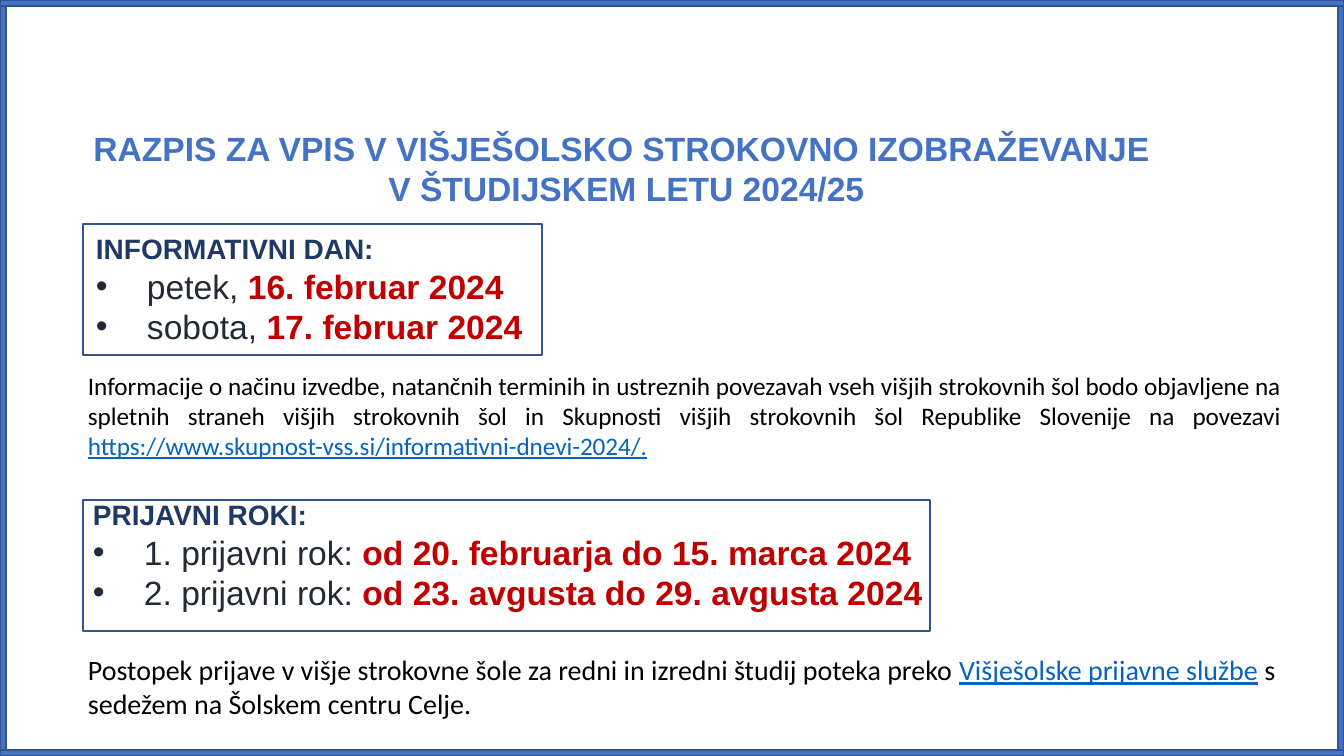
from lxml import etree
from pptx import Presentation
from pptx.dml.color import RGBColor
from pptx.enum.shapes import MSO_SHAPE
from pptx.enum.text import PP_ALIGN
from pptx.oxml.ns import qn
from pptx.util import Pt

PX = 914400 / 134.4
WIDTH, HEIGHT, BAR = 1344, 756, 6
RECTANGLE = MSO_SHAPE.RECTANGLE
LEFT, CENTER, JUSTIFY = PP_ALIGN.LEFT, PP_ALIGN.CENTER, PP_ALIGN.JUSTIFY
BLUE, EDGE, NAVY = "4472C4", "325491", "203864"
DARK, RED, LINK, BLACK = "222A35", "C00000", "0563C1", "000000"


def px(value):
    return round(value * PX)


def color(value):
    return RGBColor.from_string(value)


def add_rectangle(page, left, top, width, height, fill=None):
    shape = page.shapes.add_shape(RECTANGLE, px(left), px(top), px(width), px(height))
    shape.shadow.inherit = False
    if fill:
        shape.fill.solid()
        shape.fill.fore_color.rgb = color(fill)
    else:
        shape.fill.background()
    shape.line.color.rgb = color(EDGE)
    shape.line.width = Pt(1)


def add_text_box(page, left, top, width, height, inset_x=13, inset_y=7):
    box = page.shapes.add_textbox(px(left), px(top), px(width), px(height))
    frame = box.text_frame
    frame.word_wrap = True
    frame.margin_left = frame.margin_right = px(inset_x)
    frame.margin_top = frame.margin_bottom = px(inset_y)
    return frame


def add_bullet(para):
    properties = para._p.get_or_add_pPr()
    properties.set("marL", str(px(51)))
    properties.set("indent", str(px(-51)))
    etree.SubElement(properties, qn("a:buFont")).set("typeface", "Arial")
    etree.SubElement(properties, qn("a:buChar")).set("char", "•")


def add_paragraph(frame, spans, size, font="Arial", align=LEFT, bold=None, bullet=False):
    para = frame.paragraphs[0]
    if para.runs:
        para = frame.add_paragraph()
    para.alignment = align
    if bullet:
        add_bullet(para)
    para.font.name = font
    para.font.size = Pt(size)
    para.font.bold = bold
    for text, tint in spans:
        span = para.add_run()
        span.text = text
        span.font.color.rgb = color(tint)
        if tint == RED:
            span.font.bold = True
        if tint == LINK:
            span.font.underline = True


def add_dates(page, left, top, width, heading, dates):
    frame = add_text_box(page, left, top, width, 176, 10, 5)
    add_paragraph(frame, [(heading, NAVY)], 15, bold=True)
    for label, date in dates:
        add_paragraph(frame, [(label, DARK), (date, RED)], 18, bullet=True)


def add_border(page):
    for left in (WIDTH - BAR, 0):
        add_rectangle(page, left, 0, BAR, HEIGHT, BLUE)
    for top in (0, HEIGHT - BAR):
        add_rectangle(page, 0, top, WIDTH, BAR, BLUE)


def main():
    deck = Presentation()
    deck.slide_width, deck.slide_height = px(WIDTH), px(HEIGHT)
    page = deck.slides.add_slide(deck.slide_layouts[6])

    title = add_text_box(page, 66, 121, 1121, 95)
    for line in ("RAZPIS ZA VPIS V VIŠJEŠOLSKO STROKOVNO IZOBRAŽEVANJE ",
                 "V ŠTUDIJSKEM LETU 2024/25"):
        add_paragraph(title, [(line, BLUE)], 18, align=CENTER, bold=True)

    add_dates(page, 86, 227, 702, "INFORMATIVNI DAN:", [
        ("petek, ", "16. februar 2024"),
        ("sobota, ", "17. februar 2024"),
    ])
    add_dates(page, 83, 493, 957, "PRIJAVNI ROKI:", [
        ("1. prijavni rok: ", "od 20. februarja do 15. marca 2024"),
        ("2. prijavni rok: ", "od 23. avgusta do 29. avgusta 2024"),
    ])

    procedure = add_text_box(page, 75, 646, 1219, 82)
    add_paragraph(procedure, [
        ("Postopek prijave v višje strokovne šole za redni in izredni študij "
         "poteka preko ", BLACK),
        ("Višješolske prijavne službe", LINK),
        (" s sedežem na Šolskem centru Celje.", BLACK),
    ], 15, "Calibri")

    information = add_text_box(page, 75, 363, 1219, 167)
    add_paragraph(information, [
        ("Informacije o načinu izvedbe, natančnih terminih in ustreznih povezavah "
         "vseh višjih strokovnih šol bodo objavljene na spletnih straneh višjih "
         "strokovnih šol in Skupnosti višjih strokovnih šol Republike Slovenije "
         "na povezavi ", BLACK),
        ("https://www.skupnost-vss.si/informativni-dnevi-2024/.", LINK),
    ], 13.5, "Calibri", JUSTIFY)

    for top, width in ((224, 459), (500, 847)):
        add_rectangle(page, 83, top, width, 131)
    add_border(page)
    deck.save("out.pptx")


if __name__ == "__main__":
    main()
